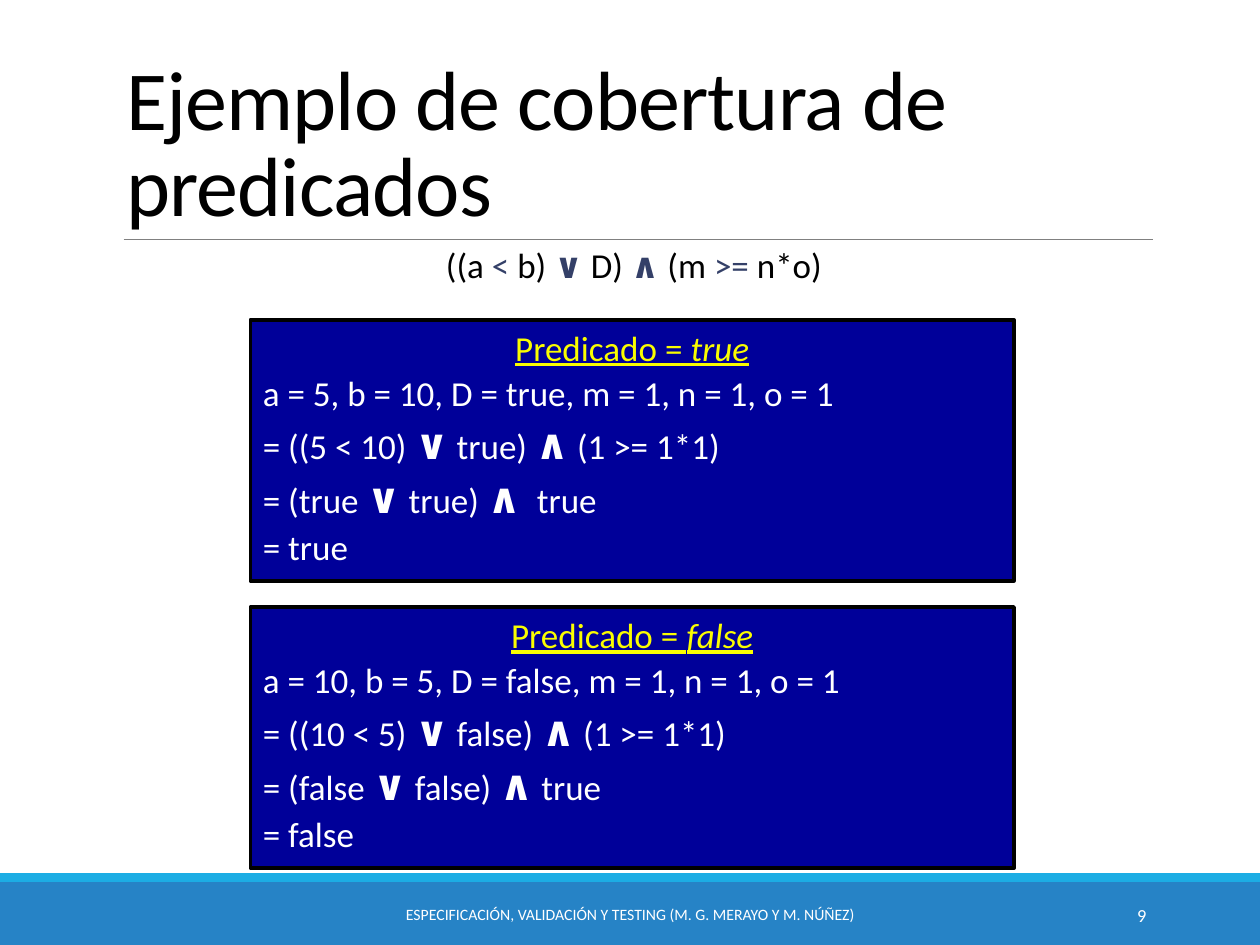
from itertools import groupby

from lxml.etree import SubElement
from pptx import Presentation
from pptx.dml.color import RGBColor
from pptx.enum.shapes import MSO_CONNECTOR as Connector, MSO_SHAPE as Shape
from pptx.enum.text import MSO_ANCHOR as Anchor, PP_ALIGN as Align
from pptx.oxml.ns import qn
from pptx.util import Cm, Pt

COLORS = {
    "band": "2683C6",
    "stripe": "1CADE4",
    "rule": "808080",
    "panel": "000099",
    "heading": "FAFD00",
    "operator": "344068",
    "black": "000000",
    "white": "FFFFFF",
}
LOGIC = "∨∧"
COMPARISON = "<>="


def color(name):
    return RGBColor.from_string(COLORS[name])


def add_span(para, text, size=20, ink="black", bold=False, italic=False,
             underline=False, tracking=None):
    span = para.add_run()
    span.text = text
    font = span.font
    font.name, font.size = "Calibri", Pt(size)
    font.bold, font.italic, font.underline = bold, italic, underline
    font.color.rgb = color(ink)
    if tracking is not None:
        font._element.set("spc", str(int(tracking * 100)))


def format_para(para, align=Align.LEFT, before=0, spacing=1.0):
    para.alignment = align
    para.space_before = Pt(before)
    para.line_spacing = spacing
    return para


def add_logic(para, text, logic_size=20, ink="black", logic_ink="black",
              comparison_ink="black"):
    """Write an expression, setting its logical and comparison signs apart."""
    def kind(sign):
        return "logic" if sign in LOGIC else "comparison" if sign in COMPARISON else "plain"

    styles = {
        "logic": dict(size=logic_size, ink=logic_ink, bold=True),
        "comparison": dict(ink=comparison_ink),
        "plain": dict(ink=ink),
    }
    for name, signs in groupby(text, kind):
        add_span(para, "".join(signs), **styles[name])


def add_box(page, left, top, width, height, anchor=Anchor.TOP):
    box = page.shapes.add_textbox(Cm(left), Cm(top), Cm(width), Cm(height))
    box.text_frame.word_wrap = True
    box.text_frame.vertical_anchor = anchor
    return box.text_frame


def add_rect(page, left, top, width, height, fill, line=None):
    rect = page.shapes.add_shape(
        Shape.RECTANGLE, Cm(left), Cm(top), Cm(width), Cm(height))
    rect.shadow.inherit = False
    rect.fill.solid()
    rect.fill.fore_color.rgb = color(fill)
    if line:
        rect.line.color.rgb = color(line)
        rect.line.width = Pt(2.25)
    else:
        rect.line.fill.background()
    return rect


def add_rule(page, left, right, top):
    rule = page.shapes.add_connector(
        Connector.STRAIGHT, Cm(left), Cm(top), Cm(right), Cm(top))
    rule.line.color.rgb = color("rule")
    rule.line.width = Pt(0.5)
    SubElement(rule._element.spPr, qn("a:effectLst"))


def add_title(page, text):
    title = page.shapes.title
    title.left, title.top = Cm(2.29), Cm(0.79)
    title.width, title.height = Cm(20.96), Cm(4.04)
    title.text_frame.word_wrap = True
    title.text_frame.vertical_anchor = Anchor.BOTTOM
    para = format_para(title.text_frame.paragraphs[0], spacing=0.85)
    add_span(para, text, size=48, tracking=-0.5)


def add_case(page, top, result, steps):
    """Draw a panel that evaluates the predicate step by step."""
    frame = add_rect(page, 5.05, top, 15.39, 5.26, "panel", "black").text_frame
    frame.word_wrap = True
    frame.vertical_anchor = Anchor.TOP
    heading = format_para(frame.paragraphs[0], Align.CENTER, before=2)
    style = dict(ink="heading", underline=True)
    add_span(heading, "Predicado = ", **style)
    add_span(heading, result, italic=True, **style)
    for step in [*steps, f"= {result}"]:
        para = format_para(frame.add_paragraph(), before=2)
        add_logic(para, step, logic_size=24, ink="white", logic_ink="white",
                  comparison_ink="white")


def add_footer(page, left, width, text, size, align):
    frame = add_box(page, left, 17.93, width, 1.02, Anchor.MIDDLE)
    add_span(format_para(frame.paragraphs[0], align), text, size=size, ink="white")


def main():
    deck = Presentation()
    deck.slide_width, deck.slide_height = Cm(25.4), Cm(19.05)
    page = deck.slides.add_slide(deck.slide_layouts[5])

    # Background bands and title
    add_rect(page, 0, 17.78, 25.4, 1.27, "band")
    add_rect(page, 0, 17.6, 25.4, 0.18, "stripe")
    add_rule(page, 2.49, 23.24, 4.83)
    add_title(page, "Ejemplo de cobertura de predicados")

    # Predicate
    frame = add_box(page, 0.46, 4.88, 24.64, 1.65)
    para = format_para(frame.paragraphs[0], Align.CENTER, before=2, spacing=0.9)
    add_logic(para, "((a < b) ∨ D) ∧ (m >= n*o)", logic_ink="operator",
              comparison_ink="operator")

    # One case for each outcome
    add_case(page, 6.45, "true", [
        "a = 5, b = 10, D = true, m = 1, n = 1, o = 1",
        "= ((5 < 10) ∨ true) ∧ (1 >= 1*1)",
        "= (true ∨ true) ∧  true",
    ])
    add_case(page, 12.24, "false", [
        "a = 10, b = 5, D = false, m = 1, n = 1, o = 1",
        "= ((10 < 5) ∨ false) ∧ (1 >= 1*1)",
        "= (false ∨ false) ∧ true",
    ])

    # Footer
    add_footer(page, 7.67, 10.06,
               "ESPECIFICACIÓN, VALIDACIÓN Y TESTING (M. G. MERAYO Y M. NÚÑEZ)",
               9, Align.CENTER)
    add_footer(page, 20.62, 2.74, "9", 10.5, Align.RIGHT)

    deck.save("out.pptx")


if __name__ == "__main__":
    main()
